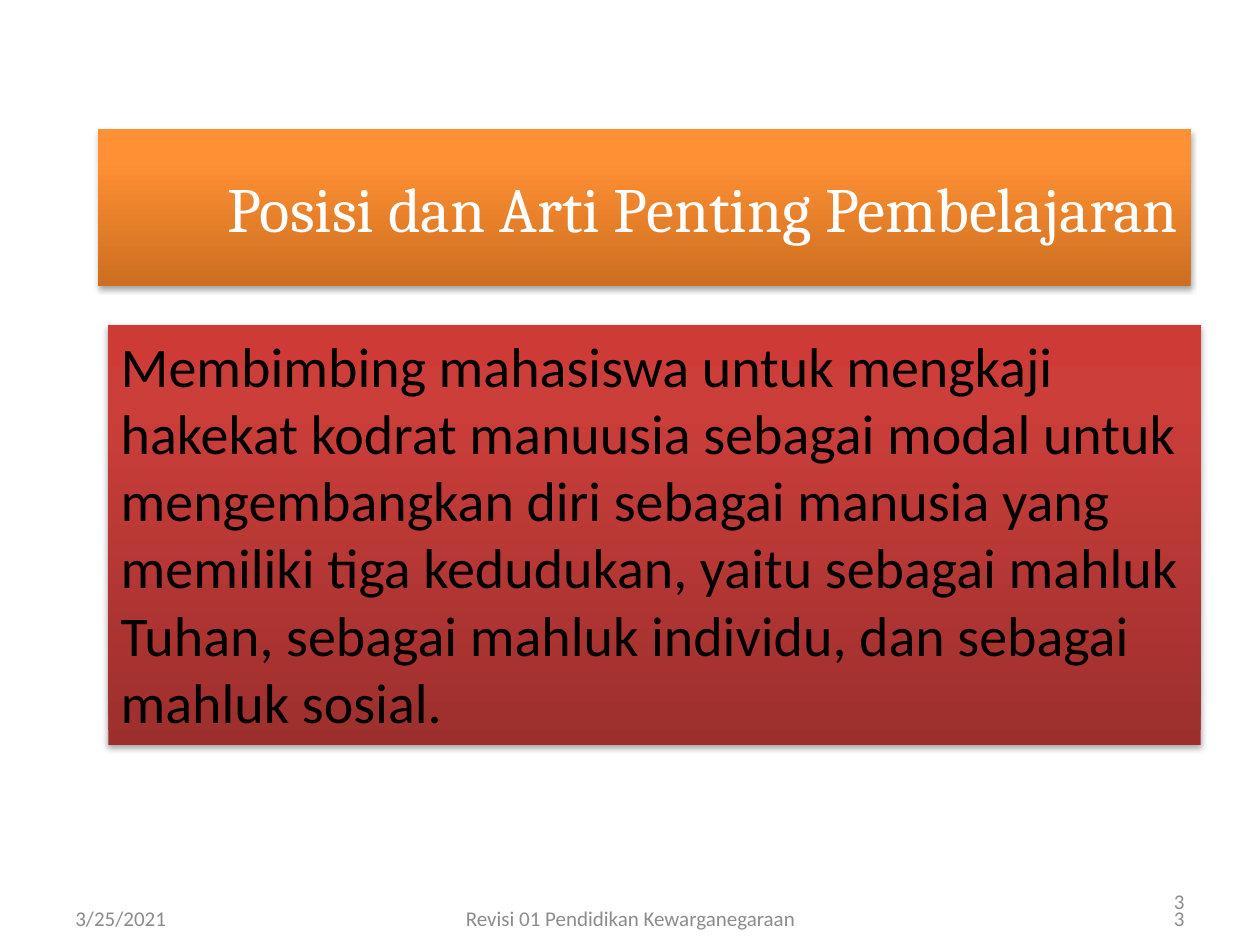
"""Build the slide on the position and importance of the course."""
from copy import deepcopy

from lxml import etree
from pptx import Presentation
from pptx import util as u
from pptx.dml.color import RGBColor
from pptx.enum import shapes, text
from pptx.oxml.ns import qn

FOOTER = {"size": 12, "name": "Calibri", "color": "8C8C8C"}
TITLE = {"size": 36, "name": "Cambria", "color": "FFFFFF"}
BODY = {"size": 32, "name": "Calibri", "color": "000000"}
LEFT, CENTER, RIGHT = text.PP_ALIGN.LEFT, text.PP_ALIGN.CENTER, text.PP_ALIGN.RIGHT
TOP, MIDDLE = text.MSO_ANCHOR.TOP, text.MSO_ANCHOR.MIDDLE


def color(value):
    """Turn a hex string into a colour."""
    return RGBColor.from_string(value)


def write(shape, words, style, align, anchor):
    """Put one formatted paragraph in a shape."""
    frame = shape.text_frame
    frame.word_wrap = True
    frame.vertical_anchor = anchor
    para = frame.paragraphs[0]
    para.alignment = align
    span = para.add_run()
    span.text = words
    formats = {"size": u.Pt(style["size"]), "name": style["name"]}
    for key, value in formats.items():
        setattr(span.font, key, value)
    span.font.color.rgb = color(style["color"])


def add_label(slide, place, words, align):
    """Add a footer text box."""
    box = slide.shapes.add_textbox(*map(u.Inches, place))
    write(box, words, FOOTER, align, MIDDLE)


def fill_gradient(shape, hues):
    """Blend three colours from the bottom of a shape to its top."""
    fill = shape.fill
    fill.gradient()
    fill.gradient_angle = 90
    stop_list = shape.element.spPr.find(".//" + qn("a:gsLst"))
    stop_list.append(deepcopy(stop_list[-1]))
    for stop, position, hue in zip(fill.gradient_stops, (0, 0.8, 1), hues):
        stop.position = position
        stop.color.rgb = color(hue)


def add_shadow(shape):
    """Give a shape a soft shadow below it."""
    shape.shadow.inherit = False
    effects = shape.element.spPr.find(qn("a:effectLst"))
    shadow = etree.SubElement(effects, qn("a:outerShdw"), blurRad="40000",
                              dist="23000", dir="5400000", rotWithShape="0")
    hue = etree.SubElement(shadow, qn("a:srgbClr"), val="000000")
    etree.SubElement(hue, qn("a:alpha"), val="35000")


def add_panel(slide, place, hues, words, style, align, anchor):
    """Add a shaded rectangle with text."""
    panel = slide.shapes.add_shape(shapes.MSO_SHAPE.RECTANGLE, *map(u.Inches, place))
    fill_gradient(panel, hues)
    panel.line.fill.background()
    add_shadow(panel)
    write(panel, words, style, align, anchor)
    return panel


def main():
    """Build and save the deck."""
    deck = Presentation()
    deck.slide_width, deck.slide_height = u.Inches(10), u.Inches(7.5)
    slide = deck.slides.add_slide(deck.slide_layouts[6])
    for place, words, align in (
        ((7.17, 6.95, 2.33, 0.4), "3", RIGHT),
        ((0.5, 7.09, 2.33, 0.4), "3/25/2021", LEFT),
        ((3.42, 7.09, 3.17, 0.4), "Revisi 01 Pendidikan Kewarganegaraan", CENTER),
        ((7.17, 7.09, 2.33, 0.4), "3", RIGHT),
    ):
        add_label(slide, place, words, align)
    add_panel(slide, (0.78, 1.02, 8.67, 1.25), ("CC6E20", "FF9034", "FF9136"),
              "Posisi dan Arti Penting Pembelajaran", TITLE, RIGHT, MIDDLE)
    body = add_panel(
        slide, (0.86, 2.58, 8.67, 3.33), ("9C2F2D", "CB3E3A", "CE3B37"),
        "Membimbing mahasiswa untuk mengkaji hakekat kodrat manuusia sebagai modal "
        "untuk mengembangkan diri sebagai manusia yang memiliki tiga kedudukan, yaitu "
        "sebagai mahluk Tuhan, sebagai mahluk individu, dan sebagai mahluk sosial.",
        BODY, LEFT, TOP)
    body.text_frame.auto_size = text.MSO_AUTO_SIZE.SHAPE_TO_FIT_TEXT
    deck.save("out.pptx")


if __name__ == "__main__":
    main()
